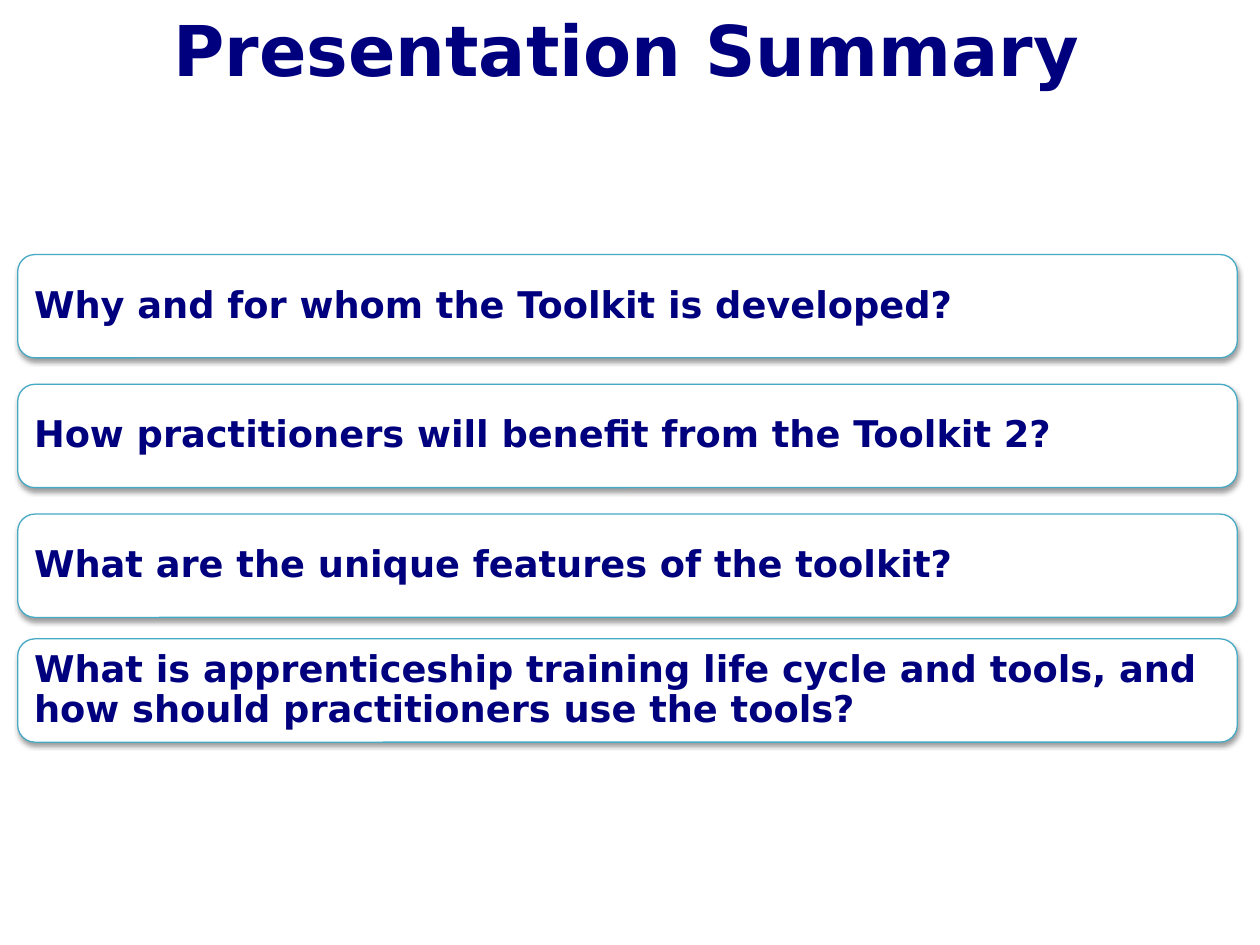
from lxml import etree
from pptx import Presentation
from pptx.dml.color import RGBColor
from pptx.enum import shapes, text
from pptx.oxml import ns
from pptx.util import Inches, Pt

COLORS = {"navy": "00007F", "teal": "46AAC5", "white": "FFFFFF", "shadow": "000000"}
FONT = "DejaVu Sans"
QUESTIONS = [
    (2.02, "Why and for whom the Toolkit is developed?"),
    (3.05, "How practitioners will benefit from the Toolkit 2?"),
    (4.08, "What are the unique features of the toolkit?"),
    (5.07, "What is apprenticeship training life cycle and tools, "
           "and how should practitioners use the tools?"),
]


def rgb(name):
    return RGBColor.from_string(COLORS[name])


def write(tf, words, size, align, anchor, inset, spacing=1.0):
    tf.word_wrap = True
    tf.auto_size = text.MSO_AUTO_SIZE.NONE
    tf.vertical_anchor = anchor
    tf.margin_left = tf.margin_right = Inches(inset)
    tf.margin_top = tf.margin_bottom = Inches(min(inset, 0.09))
    p = tf.paragraphs[0]
    p.alignment, p.line_spacing = align, spacing
    p.space_before = p.space_after = Pt(0)
    r = p.add_run()
    r.text = words
    r.font.name, r.font.size, r.font.bold = FONT, Pt(size), True
    r.font.color.rgb = rgb("navy")


def add_shadow(sp, blur, dist, alpha):
    sp.shadow.inherit = False
    effects = sp._element.spPr.find(ns.qn("a:effectLst"))
    outer = etree.SubElement(effects, ns.qn("a:outerShdw"), blurRad=str(Pt(blur)),
                             dist=str(Pt(dist)), dir="5400000", rotWithShape="0")
    color = etree.SubElement(outer, ns.qn("a:srgbClr"), val=COLORS["shadow"])
    etree.SubElement(color, ns.qn("a:alpha"), val=str(alpha * 1000))


def add_title(s, x, y, w, h):
    sp = s.shapes.title
    sp.left, sp.top, sp.width, sp.height = (Inches(v) for v in (x, y, w, h))
    write(sp.text_frame, "Presentation Summary", 40, text.PP_ALIGN.CENTER,
          text.MSO_ANCHOR.BOTTOM, inset=0.05)


def add_question(s, words, x, y, w, h):
    sp = s.shapes.add_shape(shapes.MSO_SHAPE.ROUNDED_RECTANGLE,
                            *(Inches(v) for v in (x, y, w, h)))
    sp.fill.solid()
    sp.fill.fore_color.rgb = rgb("white")
    sp.line.color.rgb = rgb("teal")
    sp.line.width = Pt(0.75)
    add_shadow(sp, blur=3.1, dist=1.6, alpha=38)
    write(sp.text_frame, words, 21, text.PP_ALIGN.LEFT, text.MSO_ANCHOR.MIDDLE,
          inset=0.09, spacing=0.9)


def main():
    prs = Presentation()
    prs.slide_width, prs.slide_height = Inches(10), Inches(7.5)
    s = prs.slides.add_slide(prs.slide_layouts[5])

    # Question bars
    for top, words in QUESTIONS:
        add_question(s, words, 0.14, top, 9.68, 0.82)

    # Heading
    add_title(s, 0.32, 0, 9.3, 0.77)

    prs.save("out.pptx")


if __name__ == "__main__":
    main()
